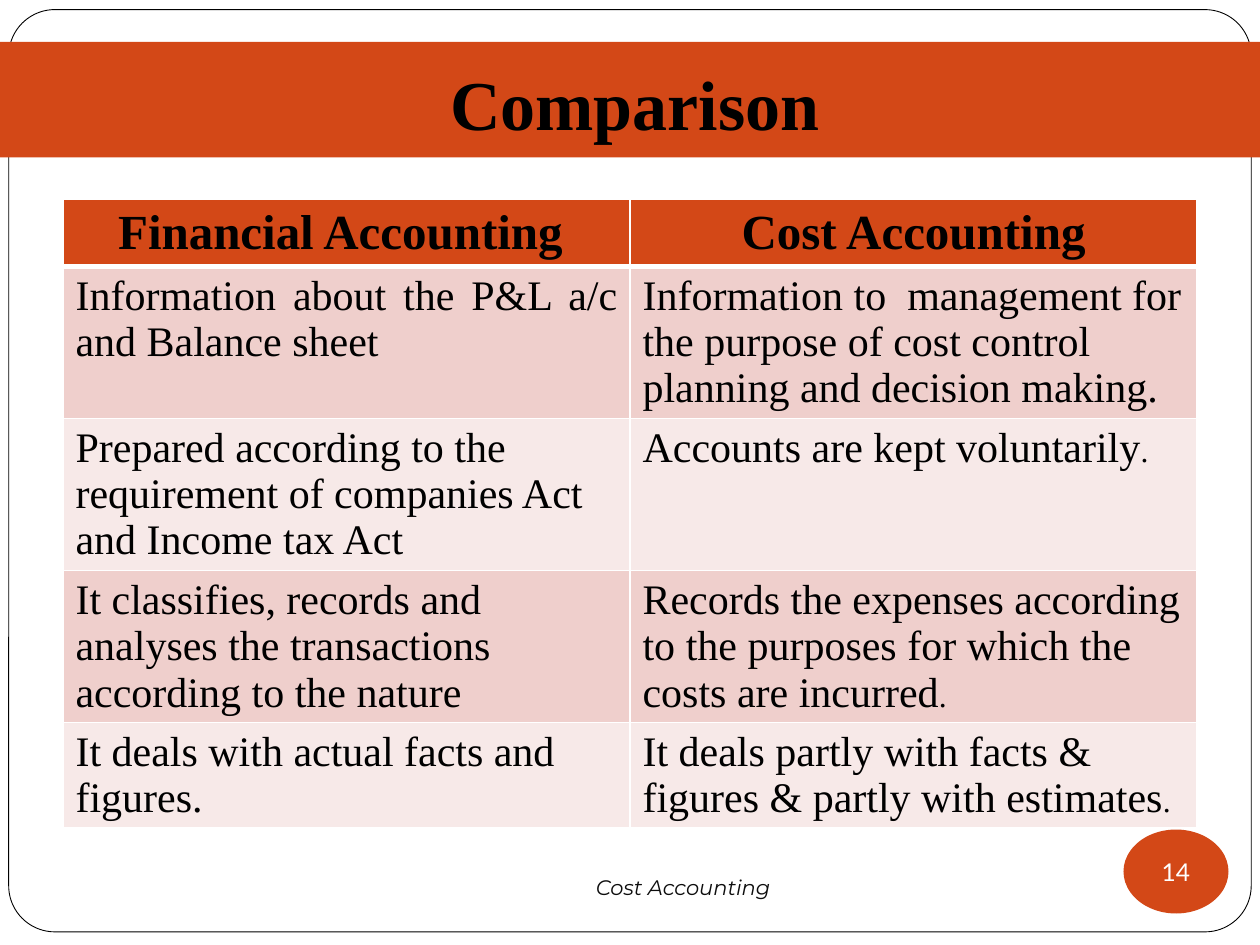
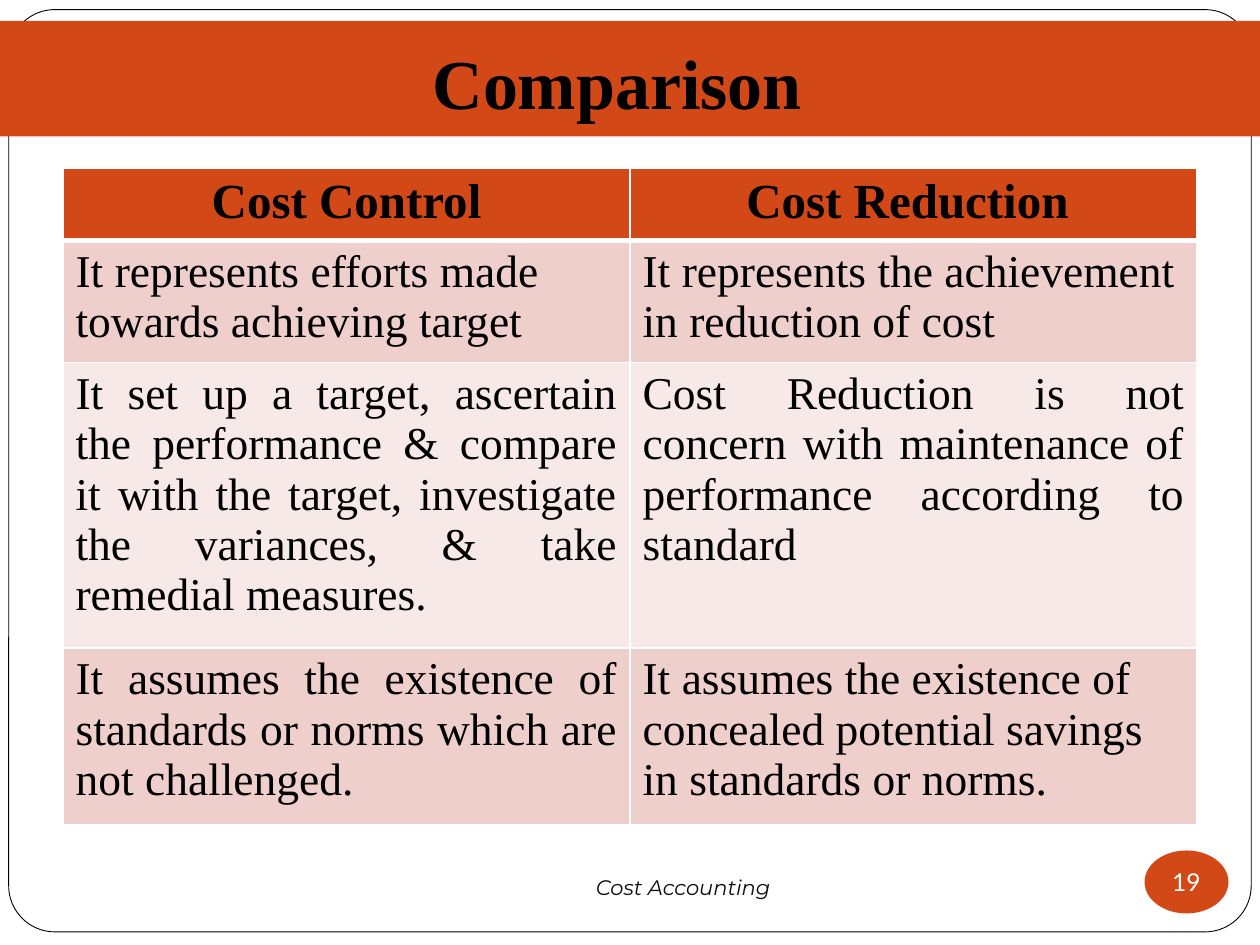
from lxml import etree
from pptx import Presentation
from pptx import util as u
from pptx.dml.color import RGBColor
from pptx.enum import shapes, text
from pptx.oxml import ns

Pt = u.Pt
SERIF = "Times New Roman"
THEME = {
    "accent": "D34817",
    "bands": ("EFCFCC", "F7E9E8"),
    "paper": "FFFFFF",
    "ink": "000000",
    "title": {"name": SERIF, "size": Pt(40), "bold": True, "color": "000000"},
    "head": {"name": SERIF, "size": Pt(28), "bold": True, "color": "000000"},
    "body": {"name": SERIF, "bold": False, "color": "000000"},
    "number": {"name": "Lato", "size": Pt(14), "color": "FFFFFF"},
    "footer": {"name": "Montserrat", "size": Pt(12), "italic": True, "color": "0D0D0D"},
}
LEFT, CENTER, JUSTIFY = text.PP_ALIGN.LEFT, text.PP_ALIGN.CENTER, text.PP_ALIGN.JUSTIFY

SLIDES = [
    {
        "number": "14", "badge": (60, 48), "band_top": 24, "title_left": 257.2,
        "table_top": 114, "body_size": 24, "row_heights": (37.7, 86.9, 86.9, 86.5, 60),
        "head": ("Financial Accounting ", "Cost Accounting"),
        "rows": [
            (("Information about the P&L a/c and Balance sheet", JUSTIFY),
             ("Information to  management for the purpose of cost control planning and decision making.", LEFT)),
            (("Prepared according to the requirement of companies Act and Income tax Act", LEFT),
             ("Accounts are kept voluntarily", LEFT, ".")),
            (("It classifies, records and analyses the transactions according to the nature", LEFT),
             ("Records the expenses according to the purposes for which the costs are incurred", LEFT, ".")),
            (("It deals with actual facts and figures.", LEFT),
             ("It deals partly with facts &  figures & partly with estimates", LEFT, ".")),
        ],
    },
    {
        "number": "19", "badge": (48, 36), "band_top": 12, "title_left": 247.2,
        "table_top": 96, "body_size": 26, "row_heights": (41.5, 65, 151, 93.5),
        "head": ("Cost Control", "Cost Reduction "),
        "rows": [
            (("It represents efforts made towards achieving target", LEFT),
             ("It represents the achievement in reduction of cost", LEFT)),
            (("It set up a target, ascertain the performance & compare it with the target, "
              "investigate the variances, & take remedial measures.", JUSTIFY),
             ("Cost Reduction is not concern with maintenance of performance according to standard", JUSTIFY)),
            (("It assumes the existence of standards or norms which are not challenged.", JUSTIFY),
             ("It assumes the existence of concealed potential savings in standards or norms.", LEFT)),
        ],
    },
]


def write(tf, content, style, align=LEFT, **frame):
    for key, value in frame.items():
        setattr(tf, key, value)
    p = tf.paragraphs[0]
    p.alignment = align
    r = p.add_run()
    r.text = content
    for key, value in style.items():
        if key == "color":
            r.font.color.rgb = RGBColor.from_string(value)
        else:
            setattr(r.font, key, value)


def add_block(s, kind, box, fill):
    sp = s.shapes.add_shape(kind, *map(Pt, box))
    sp.shadow.inherit = False
    sp.fill.solid()
    sp.fill.fore_color.rgb = RGBColor.from_string(fill)
    sp.line.fill.background()
    return sp


prs = Presentation()
prs.slide_width, prs.slide_height = Pt(720), Pt(540)

for data in SLIDES:
    s = prs.slides.add_slide(prs.slide_layouts[6])

    frame = add_block(s, shapes.MSO_SHAPE.ROUNDED_RECTANGLE, (5, 5.5, 710, 527), THEME["paper"])
    frame.adjustments[0] = 0.05
    frame.line.color.rgb = RGBColor.from_string(THEME["ink"])
    frame.line.width = Pt(0.5)

    band = add_block(s, shapes.MSO_SHAPE.RECTANGLE, (0, data["band_top"], 720, 66), THEME["accent"])
    write(band.text_frame, "Comparison", THEME["title"], word_wrap=True,
          vertical_anchor=text.MSO_ANCHOR.BOTTOM, margin_left=Pt(data["title_left"]),
          margin_top=Pt(3.6), margin_bottom=Pt(7.2))

    heights = data["row_heights"]
    table = s.shapes.add_table(len(heights), 2, Pt(36), Pt(data["table_top"]),
                               Pt(648), Pt(sum(heights))).table
    for row, height in zip(table.rows, heights):
        row.height = Pt(height)
    body = {**THEME["body"], "size": Pt(data["body_size"])}
    grid = [[(heading, CENTER) for heading in data["head"]], *data["rows"]]
    for i, row in enumerate(grid):
        for j, (content, align, *stop) in enumerate(row):
            cell = table.cell(i, j)
            tcPr = cell._tc.get_or_add_tcPr()
            widths = {"L": 1, "R": 1, "T": 3 if i == 1 else 1, "B": 3 if i == 0 else 1}
            for side, width in widths.items():
                ln = etree.SubElement(tcPr, ns.qn("a:ln" + side), w=str(Pt(width)))
                solid = etree.SubElement(ln, ns.qn("a:solidFill"))
                etree.SubElement(solid, ns.qn("a:srgbClr"), val=THEME["paper"])
            cell.fill.solid()
            cell.fill.fore_color.rgb = RGBColor.from_string(
                THEME["bands"][(i - 1) % 2] if i else THEME["accent"])
            write(cell.text_frame, content, body if i else THEME["head"], align)
            for mark in stop:
                write(cell.text_frame, mark, {**body, "size": Pt(18)}, align)

    width, height = data["badge"]
    badge = add_block(s, shapes.MSO_SHAPE.OVAL, (702 - width, 522 - height, width, height), THEME["accent"])
    write(badge.text_frame, data["number"], THEME["number"], CENTER, word_wrap=False,
          vertical_anchor=text.MSO_ANCHOR.MIDDLE,
          margin_left=0, margin_right=0, margin_top=0, margin_bottom=0)

    footer = s.shapes.add_textbox(Pt(18), Pt(486), Pt(672), Pt(42))
    write(footer.text_frame, "Cost Accounting", THEME["footer"], word_wrap=True,
          vertical_anchor=text.MSO_ANCHOR.MIDDLE, margin_left=Pt(322.5))

prs.save("out.pptx")
